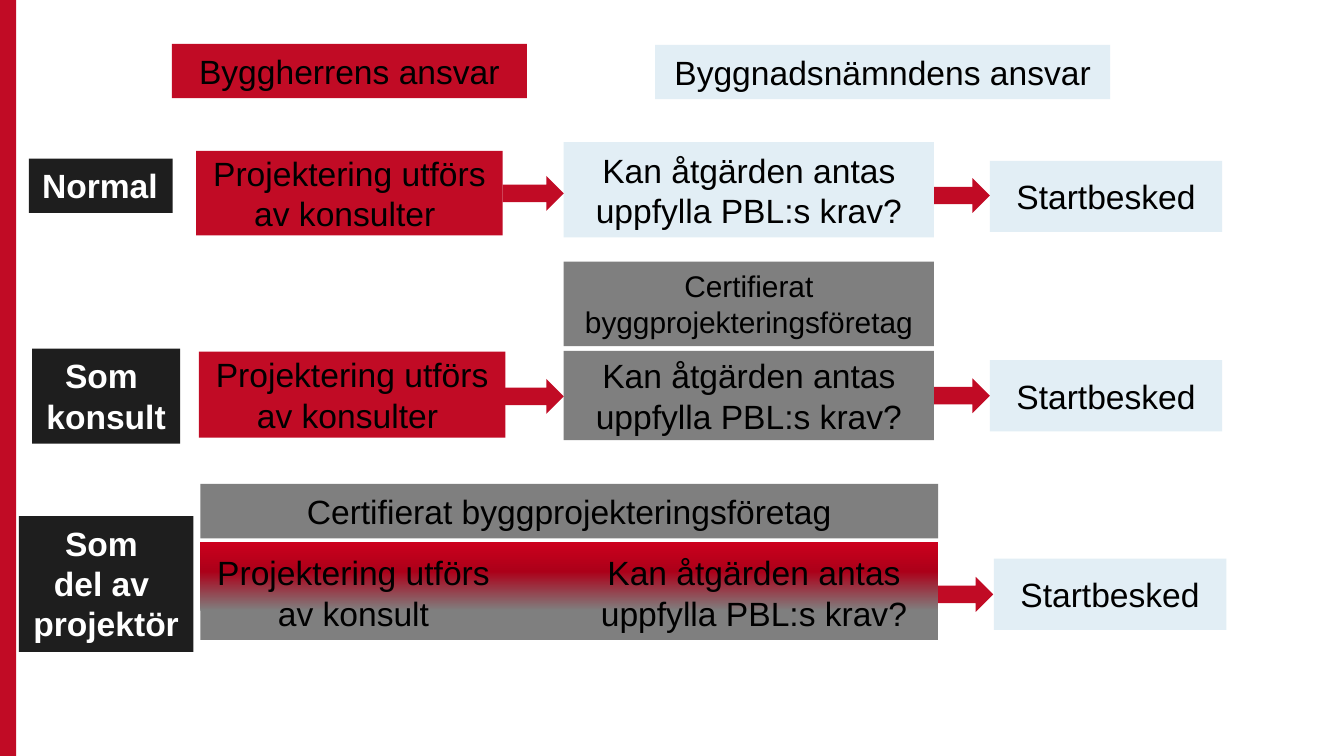
import copy

import pptx
import pptx.dml.color
import pptx.enum.shapes
import pptx.enum.text
import pptx.oxml.ns
import pptx.util

RGBColor = pptx.dml.color.RGBColor
RED = RGBColor(0xC1, 0x0B, 0x25)
PALE = RGBColor(0xE2, 0xEE, 0xF5)
GREY = RGBColor(0x7F, 0x7F, 0x7F)
DARK = RGBColor(0x1E, 0x1E, 0x1E)
BLACK = RGBColor(0, 0, 0)
WHITE = RGBColor(0xFF, 0xFF, 0xFF)
FADE = [(0, GREY), (0.3, GREY), (0.7, RGBColor(0xAC, 0, 0x19)), (1, RGBColor(0xCC, 0, 0x1D))]

SHAPE = pptx.enum.shapes.MSO_SHAPE
ALIGN = pptx.enum.text.PP_ALIGN
ANCHOR = pptx.enum.text.MSO_ANCHOR

# Widescreen page, 16 to 9
deck = pptx.Presentation()
deck.slide_width = pptx.util.Inches(10)
deck.slide_height = deck.slide_width * 9 // 16
page = deck.slides.add_slide(deck.slide_layouts[6])

# Grid of 100 columns and 56.25 rows
COLUMN = deck.slide_width / 100
ROW = deck.slide_height / 56.25


def add_block(left, top, width, height, fill=None, kind=SHAPE.RECTANGLE):
    block = page.shapes.add_shape(kind, round(left * COLUMN), round(top * ROW),
                                  round(width * COLUMN), round(height * ROW))
    block.shadow.inherit = False
    block.line.fill.background()
    if fill is not None:
        block.fill.solid()
        block.fill.fore_color.rgb = fill
    return block


def write(block, text, size=18, color=BLACK, bold=False, align=ALIGN.CENTER,
          anchor=ANCHOR.MIDDLE, wrap=True):
    frame = block.text_frame
    frame.word_wrap = wrap
    frame.vertical_anchor = anchor
    if anchor == ANCHOR.TOP:
        frame.auto_size = pptx.enum.text.MSO_AUTO_SIZE.SHAPE_TO_FIT_TEXT
    for index, line in enumerate(text.split("\n")):
        para = frame.paragraphs[0] if index == 0 else frame.add_paragraph()
        para.add_run().text = line
        para.alignment = align
        para.font.name = "Arial"
        para.font.size = pptx.util.Pt(size)
        para.font.bold = bold
        para.font.color.rgb = color


DESIGN = "Projektering utförs av konsulter "
QUESTION = "Kan åtgärden antas uppfylla PBL:s krav?"
COMPANY = "Certifierat byggprojekteringsföretag"

# Red band along the left edge
add_block(0, 0, 1.2, 56.25, RED)

# Column headings
for left, top, width, fill, text in [
        (12.8, 3.27, 26.4, RED, "Byggherrens ansvar"),
        (48.75, 3.34, 33.85, PALE, "Byggnadsnämndens ansvar")]:
    write(add_block(left, top, width, 4.04, fill), text, anchor=ANCHOR.TOP)

# Row labels
for left, top, width, height, text, align in [
        (2.15, 11.8, 10.7, 4.04, "Normal", ALIGN.LEFT),
        (2.4, 25.95, 11, 7.07, "Som \nkonsult", ALIGN.CENTER),
        (1.4, 38.4, 13, 10.1, "Som \ndel av \nprojektör", ALIGN.CENTER)]:
    write(add_block(left, top, width, height, DARK), text, color=WHITE, bold=True,
          align=align, anchor=ANCHOR.TOP, wrap=False)

# Design, question and company steps
for left, top, width, height, fill, text, size in [
        (14.6, 11.23, 22.8, 6.3, RED, DESIGN, 18),
        (41.95, 10.57, 27.55, 7.1, PALE, QUESTION, 18),
        (14.8, 26.17, 22.8, 6.4, RED, DESIGN, 18),
        (41.95, 26.1, 27.55, 6.65, GREY, QUESTION, 18),
        (41.95, 19.47, 27.55, 6.3, GREY, COMPANY, 16),
        (14.9, 36, 54.9, 4.07, GREY, COMPANY, 18)]:
    write(add_block(left, top, width, height, fill), text, size)

# Third row: shared block fading from grey at the bottom to red at the top
shared = add_block(14.9, 40.33, 54.9, 7.3)
shared.fill.gradient()
shared.fill.gradient_angle = 90
stop_list = shared._element.spPr.find(".//" + pptx.oxml.ns.qn("a:gsLst"))
while len(stop_list) < len(FADE):
    stop_list.append(copy.deepcopy(stop_list[0]))
for stop, (position, color) in zip(shared.fill.gradient_stops, FADE):
    stop.position = position
    stop.color.rgb = color

for left, width, text in [(14.9, 22.8, "Projektering utförs av konsult"),
                          (43, 26.2, QUESTION)]:
    box = page.shapes.add_textbox(round(left * COLUMN), round(40.6 * ROW),
                                  round(width * COLUMN), round(7.07 * ROW))
    write(box, text, anchor=ANCHOR.TOP)

# Start notices
for left, top in [(73.65, 11.97), (73.65, 26.8), (73.95, 41.57)]:
    write(add_block(left, top, 17.3, 5.3, PALE), "Startbesked")

# Arrows between the steps
for left, top, width in [(37.4, 13.1, 4.55), (69.5, 13.25, 4.15), (37.4, 28.2, 4.55),
                         (69.5, 28.15, 4.15), (69.8, 42.93, 4.1)]:
    add_block(left, top, width, 2.6, RED, SHAPE.RIGHT_ARROW)

deck.save("out.pptx")
